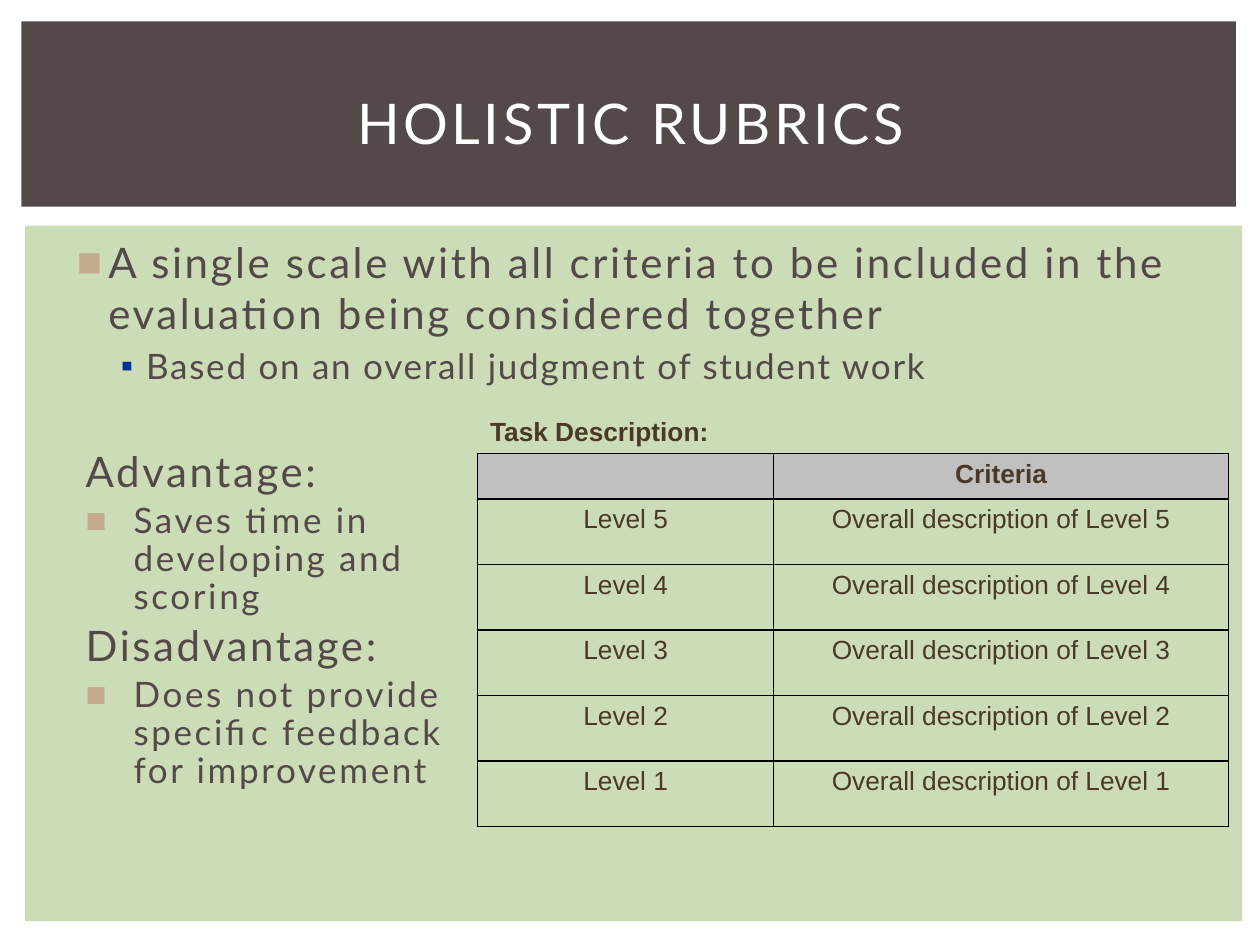
from dataclasses import dataclass

from lxml.etree import SubElement
from pptx import Presentation
from pptx.dml.color import RGBColor
from pptx.enum.shapes import MSO_SHAPE
from pptx.enum.text import MSO_ANCHOR, MSO_AUTO_SIZE, PP_ALIGN
from pptx.oxml.ns import qn
from pptx.util import Inches, Pt


@dataclass(frozen=True)
class Theme:
    dark: str = "534949"
    panel: str = "CBDCB6"
    white: str = "FFFFFF"
    tan: str = "C4AB8F"
    blue: str = "003399"
    brown: str = "4A3927"
    grey: str = "C0C0C0"
    line: str = "000000"
    sans: str = "Lato"
    cell: str = "Arial"
    title: int = 32
    large: int = 24
    small: int = 20
    table: int = 15


@dataclass(frozen=True)
class Item:
    text: str
    size: int
    left: float
    hang: float = 0
    mark: str = ""
    tint: str = ""
    level: int = 0
    track: float = 1.5


class Deck:
    """Style and current slide; lengths are cells of a 100 by 75 grid."""

    def __init__(self, theme):
        self.theme = theme
        self.prs = Presentation()
        self.prs.slide_width, self.prs.slide_height = Inches(10), Inches(7.5)
        self.unit = self.prs.slide_width / 100
        self.slide = self.prs.slides.add_slide(self.prs.slide_layouts[3])

    def grid(self, *cells):
        return [round(n * self.unit) for n in cells]

    def style(self, run, size, color, face, bold=False, track=0):
        font = run.font
        font.size, font.name, font.bold = Pt(size), face, bold
        font.color.rgb = RGBColor.from_string(color)
        if track:
            run._r.get_or_add_rPr().set("spc", str(round(track * 100)))

    def band(self, box, color):
        shape = self.slide.shapes.add_shape(MSO_SHAPE.RECTANGLE, *self.grid(*box))
        shape.shadow.inherit = False
        shape.fill.solid()
        shape.fill.fore_color.rgb = RGBColor.from_string(color)
        shape.line.fill.background()

    def place(self, index, box, anchor, fit=MSO_AUTO_SIZE.NONE):
        holder = self.slide.placeholders[index]
        holder.left, holder.top, holder.width, holder.height = self.grid(*box)
        self.slide.shapes._spTree.append(holder._element)  # bring to front
        frame = holder.text_frame
        frame.word_wrap, frame.auto_size = True, fit
        frame.vertical_anchor = anchor
        return frame

    def title(self, text, box):
        frame = self.place(0, box, MSO_ANCHOR.MIDDLE)
        frame.text = text
        para = frame.paragraphs[0]
        para.alignment = PP_ALIGN.CENTER
        self.style(para.runs[0], self.theme.title, self.theme.white,
                   self.theme.sans, track=2)

    def bullet(self, para, item):
        props = para._p.get_or_add_pPr()
        props.set("marL", str(Inches(item.left)))
        props.set("indent", str(Inches(item.hang)))
        if item.mark:
            tint = SubElement(props, qn("a:buClr"))
            SubElement(tint, qn("a:srgbClr"), val=item.tint)
            SubElement(props, qn("a:buChar"), char=item.mark)
        else:
            SubElement(props, qn("a:buNone"))

    def list(self, index, box, items, pitch=1.0, fit=MSO_AUTO_SIZE.NONE):
        frame = self.place(index, box, MSO_ANCHOR.TOP, fit)
        frame.text = "\n".join(item.text for item in items)
        for para, item in zip(frame.paragraphs, items):
            para.level, para.line_spacing = item.level, pitch
            self.bullet(para, item)
            self.style(para.runs[0], item.size, self.theme.dark,
                       self.theme.sans, track=item.track)

    def edges(self, cell, sides):
        props = cell._tc.get_or_add_tcPr()
        for side in "LRTB":
            line = SubElement(props, qn(f"a:ln{side}"), w=str(Pt(1)))
            if side in sides:
                fill = SubElement(line, qn("a:solidFill"))
                SubElement(fill, qn("a:srgbClr"), val=self.theme.line)
            else:
                SubElement(line, qn("a:noFill"))

    def cell(self, cell, text, sides, bold, align, shade):
        cell.text = text
        para = cell.text_frame.paragraphs[0]
        para.alignment = align
        for run in para.runs:
            self.style(run, self.theme.table, self.theme.brown,
                       self.theme.cell, bold)
        if not text:  # keep empty rows low
            SubElement(para._p, qn("a:endParaRPr"), sz=str(self.theme.table * 100))
        self.edges(cell, sides)
        if shade:
            cell.fill.solid()
            cell.fill.fore_color.rgb = RGBColor.from_string(shade)
        else:
            cell.fill.background()

    def table(self, box, data, cols, rows):
        frame = self.slide.shapes.add_table(len(rows), len(cols), *self.grid(*box))
        table = frame.table
        table.first_row = table.horz_banding = False
        for col, width in zip(table.columns, self.grid(*cols)):
            col.width = width
        for row, height in zip(table.rows, self.grid(*rows)):
            row.height = height
        last = len(rows) - 1
        for r, line in enumerate(data):
            sides = {0: "B", last: "T"}.get(r, "LRTB")
            align = PP_ALIGN.CENTER if r else PP_ALIGN.LEFT
            shade = self.theme.grey if r == 1 else None
            for c, text in enumerate(line):
                self.cell(table.cell(r, c), text, sides, r < 2, align, shade)
        table.cell(0, 0).merge(table.cell(0, 1))
        table.cell(0, 0).vertical_anchor = MSO_ANCHOR.BOTTOM


def main():
    look = Theme()
    deck = Deck(look)

    # Background panels
    deck.band((2, 17.9, 96.6, 55.2), look.panel)
    deck.band((1.7, 1.7, 96.4, 14.7), look.dark)

    # Rubric table: caption, header, five levels, open last row
    levels = [(f"Level {n}", f"Overall description of Level {n}")
              for n in range(5, 0, -1)]
    data = [("Task Description:", ""), ("", "Criteria"), *levels, ("", "")]
    deck.table((37.9, 30.8, 59.6, 40), data, (23.5, 36.1),
               (5.2, 3.6, *[5.2] * 6))

    # Title
    deck.title("HOLISTIC RUBRICS", (4.2, 3.9, 91.7, 11.5))

    # Definition
    deck.list(1, (4.6, 18.3, 89.6, 16.7), [
        Item("A single scale with all criteria to be included in the "
             "evaluation being considered together",
             look.large, 0.3, -0.25, "■", look.tan),
        Item("Based on an overall judgment of student work",
             look.small, 0.6, -0.2, "▪", look.blue, level=1, track=1),
    ])

    # Pros and cons
    points = [("Advantage:", "Saves time in developing and scoring"),
              ("Disadvantage:",
               "Does not provide specific feedback for improvement")]
    items = []
    for head, point in points:
        items += [Item(head, look.large, 0.16),
                  Item(point, look.small, 0.54, -0.38, "■", look.tan)]
    deck.list(2, (4.2, 35.3, 33.7, 28.6), items, 0.9,
              MSO_AUTO_SIZE.SHAPE_TO_FIT_TEXT)

    deck.prs.save("out.pptx")


if __name__ == "__main__":
    main()
